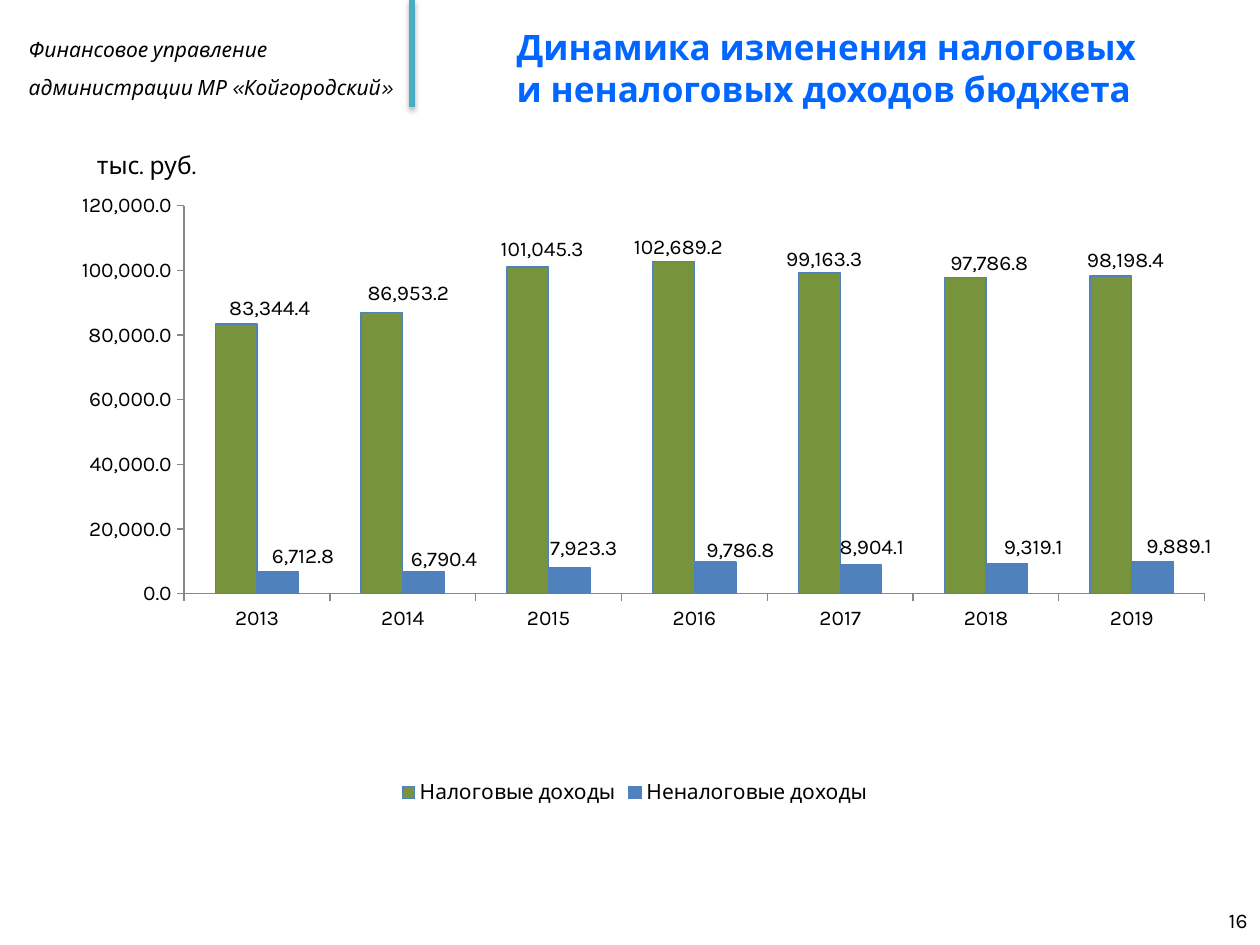
import pptx
import pptx.chart.data
import pptx.dml.color
import pptx.enum.chart
import pptx.enum.shapes
import pptx.enum.text
import pptx.oxml
import pptx.oxml.ns
import pptx.util
from pptx.util import Inches

RGBColor = pptx.dml.color.RGBColor
BLACK = RGBColor(0x00, 0x00, 0x00)
TITLE_BLUE = RGBColor(0x00, 0x66, 0xFF)
TEAL = RGBColor(0x4B, 0xAC, 0xC6)
GREEN = RGBColor(0x77, 0x93, 0x3C)
BLUE = RGBColor(0x4F, 0x81, 0xBD)
GRAY = RGBColor(0x87, 0x87, 0x87)
NUMBER_FORMAT = "#,##0.0"

YEARS = ["2013", "2014", "2015", "2016", "2017", "2018", "2019"]
TAX = [83344.4, 86953.2, 101045.3, 102689.2, 99163.3, 97786.8, 98198.4]
NON_TAX = [6712.8, 6790.4, 7923.3, 9786.8, 8904.1, 9319.1, 9889.1]

# Label shifts from the bar tops, in percent of the chart width and height
TAX_SHIFTS = [(2.8, 0.2), (2.2, -0.3), (1.2, 0), (0.4, 0.5),
              (0.4, 0.6), (2, 0.5), (1.2, 0.2)]
NON_TAX_SHIFTS = [(2.1, 0.3), (1.7, 0.8), (1.2, -0.3), (2.1, 0.9),
                  (0.9, 0), (2.2, 0.2), (2.2, 0.3)]


def manual_layout(x, y, extra=""):
    """Return a c:layout element; x and y are fractions of the chart."""
    return pptx.oxml.parse_xml(
        f'<c:layout {pptx.oxml.ns.nsdecls("c")}><c:manualLayout>{extra}'
        f'<c:x val="{x}"/><c:y val="{y}"/>'
        + ('<c:w val="0.85"/><c:h val="0.61"/>' if extra else "")
        + "</c:manualLayout></c:layout>")


class SlideBuilder:
    font_name = "Karla"

    def __init__(self, deck):
        self.page = deck.slides.add_slide(deck.slide_layouts[5])

    def style(self, font, size, color=BLACK, bold=False, italic=False):
        font.name = self.font_name
        font.size = pptx.util.Pt(size)
        font.color.rgb = color
        font.bold = bold
        font.italic = italic

    def title(self, text, left, top, width, height):
        box = self.page.shapes.title
        box.left, box.top, box.width, box.height = left, top, width, height
        frame = box.text_frame
        frame.text = text
        frame.word_wrap = True
        frame.auto_size = pptx.enum.text.MSO_AUTO_SIZE.NONE
        frame.vertical_anchor = pptx.enum.text.MSO_ANCHOR.MIDDLE
        para = frame.paragraphs[0]
        para.alignment = pptx.enum.text.PP_ALIGN.LEFT
        self.style(para.font, 20, TITLE_BLUE, bold=True)

    def text(self, lines, left, top, width, height, size=12, italic=False,
             spacing=1.0, align=pptx.enum.text.PP_ALIGN.LEFT,
             anchor=pptx.enum.text.MSO_ANCHOR.TOP):
        frame = self.page.shapes.add_textbox(left, top, width, height).text_frame
        frame.word_wrap = True
        frame.vertical_anchor = anchor
        frame.text = "\n".join(lines)
        for para in frame.paragraphs:
            para.alignment = align
            para.line_spacing = spacing
            self.style(para.font, size, italic=italic)

    def line(self, x1, y1, x2, y2, color, width):
        line = self.page.shapes.add_connector(
            pptx.enum.shapes.MSO_CONNECTOR.STRAIGHT, x1, y1, x2, y2)
        line.line.color.rgb = color
        line.line.width = pptx.util.Pt(width)
        line.element.spPr.append(pptx.oxml.parse_xml(
            f'<a:effectLst {pptx.oxml.ns.nsdecls("a")}>'
            '<a:outerShdw blurRad="40000" dist="23000" dir="5400000" rotWithShape="0">'
            '<a:srgbClr val="000000"><a:alpha val="35000"/></a:srgbClr>'
            '</a:outerShdw></a:effectLst>'))

    def axis(self, axis):
        axis.has_major_gridlines = False
        axis.major_tick_mark = pptx.enum.chart.XL_TICK_MARK.OUTSIDE
        axis.minor_tick_mark = pptx.enum.chart.XL_TICK_MARK.NONE
        axis.format.line.color.rgb = GRAY
        self.style(axis.tick_labels.font, 12)

    def labels(self, series, shifts):
        outside = pptx.enum.chart.XL_LABEL_POSITION.OUTSIDE_END
        labels = series.data_labels
        labels.show_value = True
        labels.number_format = NUMBER_FORMAT
        labels.number_format_is_linked = False
        labels.position = outside
        self.style(labels.font, 12)
        for index in range(len(shifts)):
            label = series.points[index].data_label
            label.position = outside
            self.style(label.font, 12)

    def column_chart(self, categories, rows, left, top, width, height):
        data = pptx.chart.data.CategoryChartData(number_format=NUMBER_FORMAT)
        data.categories = categories
        for name, values, color, shifts in rows:
            data.add_series(name, values)
        chart = self.page.shapes.add_chart(
            pptx.enum.chart.XL_CHART_TYPE.COLUMN_CLUSTERED,
            left, top, width, height, data).chart
        chart.has_title = False
        self.style(chart.font, 18)

        # Axes
        self.axis(chart.category_axis)
        self.axis(chart.value_axis)
        chart.value_axis.minimum_scale = 0
        chart.value_axis.maximum_scale = 120000
        chart.value_axis.major_unit = 20000
        chart.value_axis.tick_labels.number_format = NUMBER_FORMAT
        chart.value_axis.tick_labels.number_format_is_linked = False

        # Legend
        chart.has_legend = True
        chart.legend.position = pptx.enum.chart.XL_LEGEND_POSITION.BOTTOM
        chart.legend.include_in_layout = True
        self.style(chart.legend.font, 12)

        # Columns and their labels
        plot = chart.plots[0]
        plot.gap_width = 150
        plot.overlap = 0
        plot.vary_by_categories = False
        all_shifts = []
        for series, (name, values, color, shifts) in zip(plot.series, rows):
            series.format.fill.solid()
            series.format.fill.fore_color.rgb = color
            series.format.line.color.rgb = BLUE
            series.format.line.width = pptx.util.Pt(0.75)
            self.labels(series, shifts)
            all_shifts += shifts
        label_elements = list(chart.element.iter(pptx.oxml.ns.qn("c:dLbl")))
        for element, (x, y) in zip(label_elements, all_shifts):
            element.insert(1, manual_layout(x / 100, y / 100))

        # Inner plot area
        area = chart.element.find(".//" + pptx.oxml.ns.qn("c:plotArea"))
        for old in area.findall(pptx.oxml.ns.qn("c:layout")):
            area.remove(old)
        area.insert(0, manual_layout(
            0.125, 0.05, '<c:layoutTarget val="inner"/>'
            '<c:xMode val="edge"/><c:yMode val="edge"/>'))


def main():
    deck = pptx.Presentation()
    deck.slide_width, deck.slide_height = Inches(10), Inches(7.5)
    slide = SlideBuilder(deck)

    # Header
    slide.text(["Финансовое управление", "администрации МР «Койгородский»"],
               Inches(0.13), Inches(0.14), Inches(3.14), Inches(0.71),
               italic=True, spacing=1.5)
    slide.line(Inches(3.27), 0, Inches(3.27), Inches(0.85), TEAL, 3)
    slide.title("Динамика изменения налоговых и неналоговых доходов бюджета",
                Inches(4), Inches(0.03), Inches(5.34), Inches(1.01))

    # Revenue chart with its unit
    slide.column_chart(
        YEARS,
        [("Налоговые доходы", TAX, GREEN, TAX_SHIFTS),
         ("Неналоговые доходы", NON_TAX, BLUE, NON_TAX_SHIFTS)],
        Inches(0.27), Inches(1.38), Inches(9.53), Inches(5.05))
    slide.text(["тыс. руб."], Inches(0.67), Inches(1.14),
               Inches(1.18), Inches(0.34), size=14)

    # Page number
    slide.text(["16"], Inches(7.67), Inches(7.1), Inches(2.33), Inches(0.4),
               align=pptx.enum.text.PP_ALIGN.RIGHT,
               anchor=pptx.enum.text.MSO_ANCHOR.MIDDLE)

    deck.save("out.pptx")


if __name__ == "__main__":
    main()
